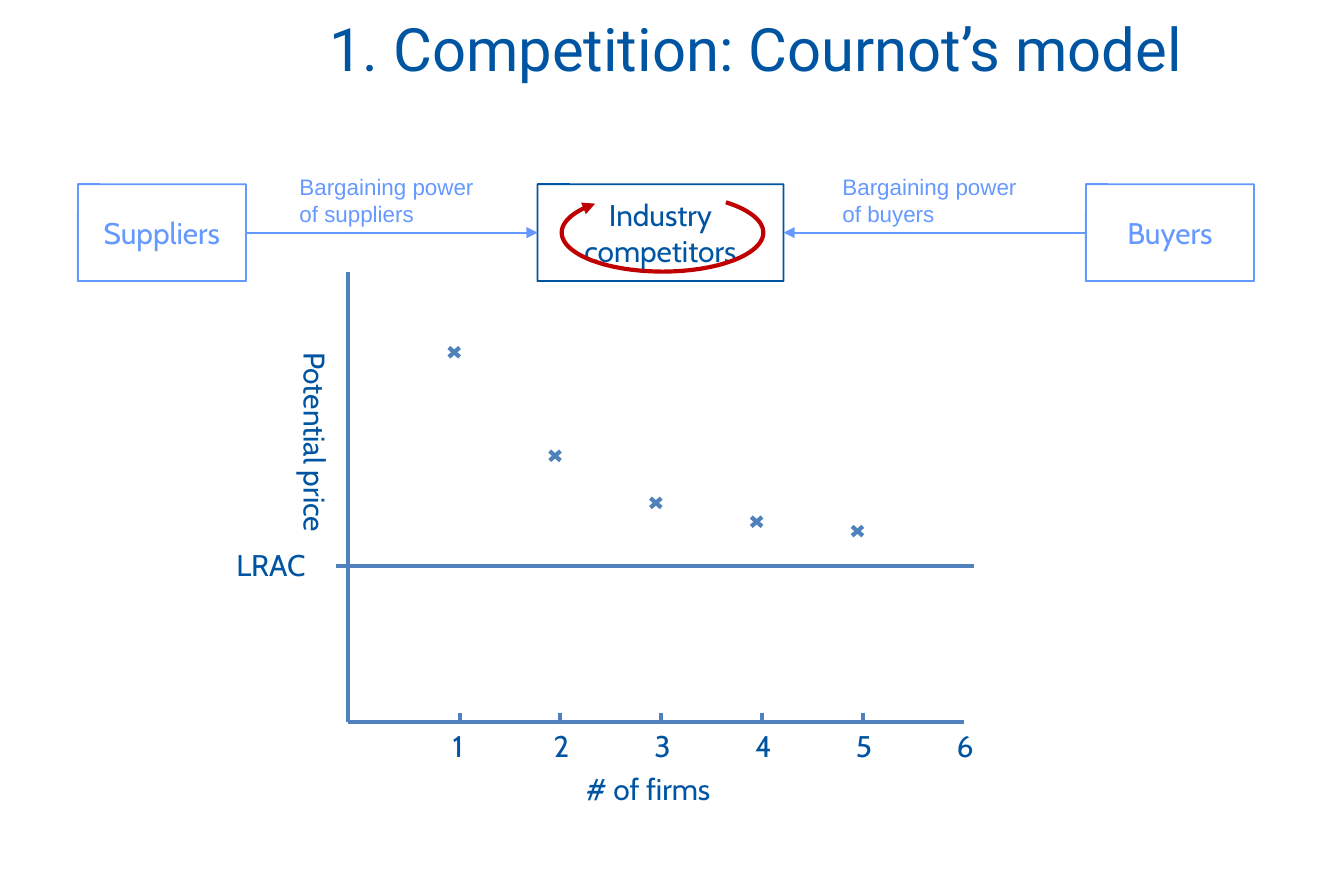
from math import cos, radians, sin

from pptx import Presentation
from pptx.dml.color import RGBColor
from pptx.enum.shapes import MSO_CONNECTOR, MSO_SHAPE
from pptx.enum.text import MSO_ANCHOR, MSO_AUTO_SIZE, PP_ALIGN
from pptx.oxml.ns import qn
from pptx.util import Inches, Pt
from lxml.etree import SubElement

COLORS = {"navy": "0055A2", "sky": "6699FF", "axis": "4F81BD", "red": "C00000"}
FIRM_STEP = 0.75
PRICE_HEIGHTS = [2.62, 3.39, 3.74, 3.88, 3.95]


def color_of(name):
    return RGBColor.from_string(COLORS[name])


def write_text(frame, text, size=16, font="Cabin", color="navy",
               align=PP_ALIGN.LEFT, anchor=MSO_ANCHOR.TOP, wrap=True):
    frame.word_wrap = wrap
    frame.auto_size = MSO_AUTO_SIZE.NONE
    frame.vertical_anchor = anchor
    for index, line in enumerate(text.split("\n")):
        paragraph = frame.paragraphs[0] if index == 0 else frame.add_paragraph()
        paragraph.alignment = align
        span = paragraph.add_run()
        span.text = line
        span.font.name = font
        span.font.size = Pt(size)
        span.font.color.rgb = color_of(color)


class SlideBuilder:
    def __init__(self, page):
        self.page = page
        self.shapes = page.shapes

    def title(self, text, *bounds):
        holder = self.shapes.title
        holder.left, holder.top, holder.width, holder.height = map(Inches, bounds)
        write_text(holder.text_frame, text, size=32, font="Roboto",
                   anchor=MSO_ANCHOR.MIDDLE)

    def label(self, text, *bounds, vertical=False, **style):
        box = self.shapes.add_textbox(*map(Inches, bounds))
        write_text(box.text_frame, text, **style)
        if vertical:
            box.text_frame._txBody.bodyPr.set("vert", "eaVert")

    def force_box(self, text, left, width, color):
        box = self.shapes.add_shape(MSO_SHAPE.ROUNDED_RECTANGLE, Inches(left),
                                    Inches(1.37), Inches(width), Inches(0.72))
        box.adjustments[0] = 0.002
        box.shadow.inherit = False
        box.fill.background()
        self.stroke(box, color, 1)
        write_text(box.text_frame, text, color=color, align=PP_ALIGN.CENTER,
                   anchor=MSO_ANCHOR.MIDDLE)
        return box

    def line(self, x1, y1, x2, y2, color="axis", width=2.25):
        connector = self.shapes.add_connector(MSO_CONNECTOR.STRAIGHT,
                                              *map(Inches, (x1, y1, x2, y2)))
        self.stroke(connector, color, width)
        SubElement(connector._element.spPr, qn("a:effectLst"))
        return connector

    def arrow(self, source, source_side, target, target_side):
        connector = self.line(0, 0, 1, 1, "sky", 1)
        connector.begin_connect(source, source_side)
        connector.end_connect(target, target_side)
        self.arrowhead(connector, "a:tailEnd")

    def cross(self, x, y):
        for rise in (-0.035, 0.035):
            self.line(x - 0.04, y + rise, x + 0.04, y - rise)

    def rivalry_loop(self, center_x, center_y, radius_x, radius_y):
        points = [(Inches(center_x + radius_x * cos(radians(angle))),
                   Inches(center_y + radius_y * sin(radians(angle))))
                  for angle in range(228, -52, -3)]
        builder = self.shapes.build_freeform(*points[0])
        builder.add_line_segments(points[1:], close=False)
        loop = builder.convert_to_shape()
        loop.shadow.inherit = False
        loop.fill.background()
        self.stroke(loop, "red", 2.25)
        self.arrowhead(loop, "a:headEnd")

    def stroke(self, shape, color, width):
        shape.line.color.rgb = color_of(color)
        shape.line.width = Pt(width)

    def arrowhead(self, shape, end):
        SubElement(shape.line._get_or_add_ln(), qn(end), type="triangle")


def main():
    deck = Presentation()
    deck.slide_width, deck.slide_height = Inches(10), Inches(6.5)
    slide = SlideBuilder(deck.slides.add_slide(deck.slide_layouts[5]))
    slide.title("1. Competition: Cournot’s model", 2.35, 0.07, 7.15, 0.57)

    slide.label("LRAC", 1.66, 4.02, 0.72, 0.37, wrap=False)
    slide.label("# of firms", 4.26, 5.68, 1.19, 0.37, wrap=False)
    slide.label("Potential price", 2.06, 2.52, 0.47, 1.5, wrap=False, vertical=True)
    for index in range(6):
        slide.label(str(index + 1), 3.27 + index * FIRM_STEP, 5.36, 0.32, 0.37,
                    wrap=False)
    for index, height in enumerate(PRICE_HEIGHTS):
        tick = 3.42 + index * FIRM_STEP
        slide.cross(tick - 0.04, height)
        slide.line(tick, 5.3, tick, 5.37)
    slide.line(2.59, 2.02, 2.59, 5.37)
    slide.line(2.59, 5.37, 7.17, 5.37)
    slide.line(2.5, 4.21, 7.25, 4.21)

    suppliers = slide.force_box("Suppliers", 0.58, 1.25, "sky")
    buyers = slide.force_box("Buyers", 8.08, 1.25, "sky")
    industry = slide.force_box("Industry competitors", 4, 1.83, "navy")
    slide.arrow(suppliers, 3, industry, 1)
    slide.arrow(buyers, 1, industry, 3)
    for party, left, width in (("buyers", 6.17, 1.83), ("suppliers", 2.13, 1.67)):
        slide.label(f"Bargaining power\nof {party}", left, 1.24, width, 0.51,
                    size=12, font="Arial", color="sky")
    slide.rivalry_loop(4.93, 1.73, 0.75, 0.29)

    deck.save("out.pptx")


if __name__ == "__main__":
    main()
